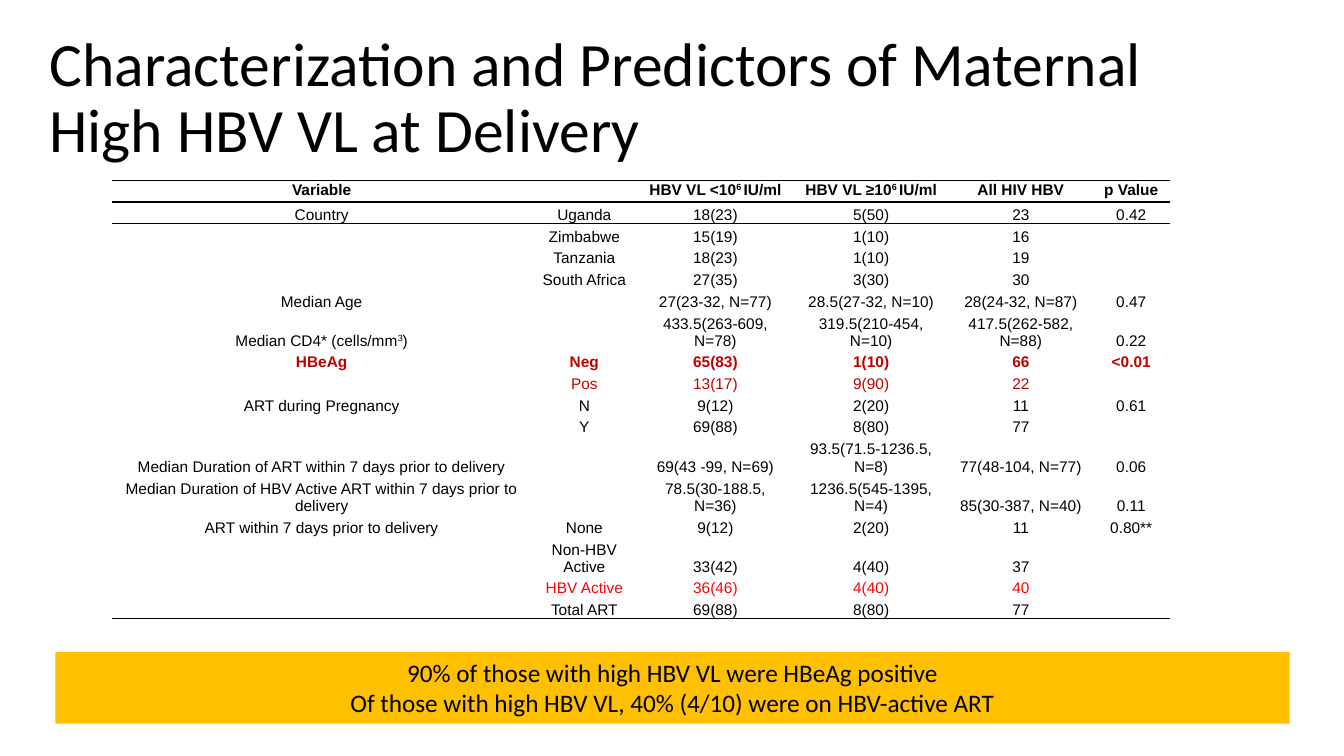
"""Build the slide on characteristics and predictors of high maternal HBV viral load."""
from dataclasses import dataclass

from lxml import etree
from pptx import Presentation
from pptx import util as u
from pptx.dml.color import RGBColor
from pptx.enum import shapes, text
from pptx.oxml.ns import qn


@dataclass(frozen=True)
class Theme:
    ink: str = "000000"
    significant: str = "C00000"
    active: str = "FF0000"
    banner: str = "FFC000"
    heading_font: str = "Calibri"
    table_font: str = "Arial"
    title_size: int = 44
    banner_size: int = 18
    table_size: int = 11
    rule_width: int = 1
    plain_table: str = "{2D5ABB26-0587-4C30-8999-92F81FD0307C}"


theme = Theme()
deck = Presentation()
deck.slide_width, deck.slide_height = u.Inches(13.33), u.Inches(7.5)


def across(percent):
    return round(deck.slide_width * percent / 100)


def down(percent):
    return round(deck.slide_height * percent / 100)


slide = deck.slides.add_slide(deck.slide_layouts[5])

title = slide.shapes.title
title.left, title.top = across(2.93), down(4.27)
title.width, title.height = across(86.27), down(18.4)
title.text_frame.text = "Characterization and Predictors of Maternal High HBV VL at Delivery"
title.text_frame.word_wrap = True
title.text_frame.auto_size = text.MSO_AUTO_SIZE.NONE
title.text_frame.vertical_anchor = text.MSO_ANCHOR.BOTTOM
heading = title.text_frame.paragraphs[0]
heading.alignment = text.PP_ALIGN.LEFT
heading.line_spacing = 0.9
heading.font.size = u.Pt(theme.title_size)
heading.font.name = theme.heading_font
heading.font.color.rgb = RGBColor.from_string(theme.ink)

# Carets enclose superscripts.
findings = [
    ("Variable", "", "HBV VL <10^6 ^IU/ml", "HBV VL ≥10^6 ^IU/ml", "All HIV HBV", "p Value"),
    ("Country", "Uganda", "18(23)", "5(50)", "23", "0.42"),
    ("", "Zimbabwe", "15(19)", "1(10)", "16", ""),
    ("", "Tanzania", "18(23)", "1(10)", "19", ""),
    ("", "South Africa", "27(35)", "3(30)", "30", ""),
    ("Median Age", "", "27(23-32, N=77)", "28.5(27-32, N=10)", "28(24-32, N=87)", "0.47"),
    ("Median CD4* (cells/mm^3^)", "", "433.5(263-609, N=78)", "319.5(210-454, N=10)",
     "417.5(262-582, N=88)", "0.22"),
    ("HBeAg", "Neg", "65(83)", "1(10)", "66", "<0.01"),
    ("", "Pos", "13(17)", "9(90)", "22", ""),
    ("ART during Pregnancy", "N", "9(12)", "2(20)", "11", "0.61"),
    ("", "Y", "69(88)", "8(80)", "77", ""),
    ("Median Duration of ART within 7 days prior to delivery", "", "69(43 -99, N=69)",
     "93.5(71.5-1236.5, N=8)", "77(48-104, N=77)", "0.06"),
    ("Median Duration of HBV Active ART within 7 days prior to delivery", "",
     "78.5(30-188.5, N=36)", "1236.5(545-1395, N=4)", "85(30-387, N=40)", "0.11"),
    ("ART within 7 days prior to delivery", "None", "9(12)", "2(20)", "11", "0.80**"),
    ("", "Non-HBV Active", "33(42)", "4(40)", "37", ""),
    ("", "HBV Active", "36(46)", "4(40)", "40", ""),
    ("", "Total ART", "69(88)", "8(80)", "77", ""),
]
column_shares = [31.21, 7.88, 11.63, 11.55, 10.73, 5.7]
table_share, two_line_share = 58, 5.2
two_line_rows = {6, 11, 12, 14}
one_line_share = (table_share - two_line_share * len(two_line_rows)) / (
    len(findings) - len(two_line_rows))
bold_rows = {0, 7}
row_colours = {7: theme.significant, 8: theme.significant, 15: theme.active}
ruled_edges = {0: ("a:lnT", "a:lnB"), 1: ("a:lnT",), len(findings) - 1: ("a:lnB",)}

table = slide.shapes.add_table(
    len(findings), len(column_shares), across(8.33), down(23.87),
    across(sum(column_shares)), down(table_share)).table
table.first_row = table.horz_banding = False
table._tbl.tblPr.find(qn("a:tableStyleId")).text = theme.plain_table
for column, share in zip(table.columns, column_shares):
    column.width = across(share)

for r, finding in enumerate(findings):
    table.rows[r].height = down(two_line_share if r in two_line_rows else one_line_share)
    for c, value in enumerate(finding):
        cell = table.cell(r, c)
        cell.margin_left = cell.margin_right = u.Inches(0.05)
        cell.margin_top, cell.margin_bottom = u.Inches(0.01), 0
        cell.vertical_anchor = text.MSO_ANCHOR.BOTTOM if r else text.MSO_ANCHOR.TOP
        for edge in ruled_edges.get(r, ()):
            rule = etree.SubElement(cell._tc.get_or_add_tcPr(), qn(edge),
                                    w=str(u.Pt(theme.rule_width)))
            ink = etree.SubElement(rule, qn("a:solidFill"))
            etree.SubElement(ink, qn("a:srgbClr"), val=theme.ink)
        cell.fill.background()

        entry = cell.text_frame.paragraphs[0]
        entry.alignment = text.PP_ALIGN.CENTER
        entry.font.size = u.Pt(theme.table_size)
        entry.font.name = theme.table_font
        entry.font.bold = r in bold_rows
        entry.font.color.rgb = RGBColor.from_string(row_colours.get(r, theme.ink))
        if not value:
            etree.SubElement(entry._p, qn("a:endParaRPr"), sz=str(theme.table_size * 100))
            continue
        for i, part in enumerate(value.split("^")):
            if part:
                run = entry.add_run()
                run.text = part
                if i % 2:
                    run._r.get_or_add_rPr().set("baseline", "30000")

banner = slide.shapes.add_shape(
    shapes.MSO_SHAPE.RECTANGLE, across(4.13), down(86.27), across(91.82), down(9.47))
banner.shadow.inherit = False
banner.fill.solid()
banner.fill.fore_color.rgb = RGBColor.from_string(theme.banner)
banner.line.fill.background()
banner.text_frame.word_wrap = True
banner.text_frame.vertical_anchor = text.MSO_ANCHOR.TOP
banner.text_frame.text = (
    "90% of those with high HBV VL were HBeAg positive\n"
    "Of those with high HBV VL, 40% (4/10) were on HBV-active ART")
for takeaway in banner.text_frame.paragraphs:
    takeaway.alignment = text.PP_ALIGN.CENTER
    takeaway.font.size = u.Pt(theme.banner_size)
    takeaway.font.name = theme.heading_font
    takeaway.font.color.rgb = RGBColor.from_string(theme.ink)

deck.save("out.pptx")
